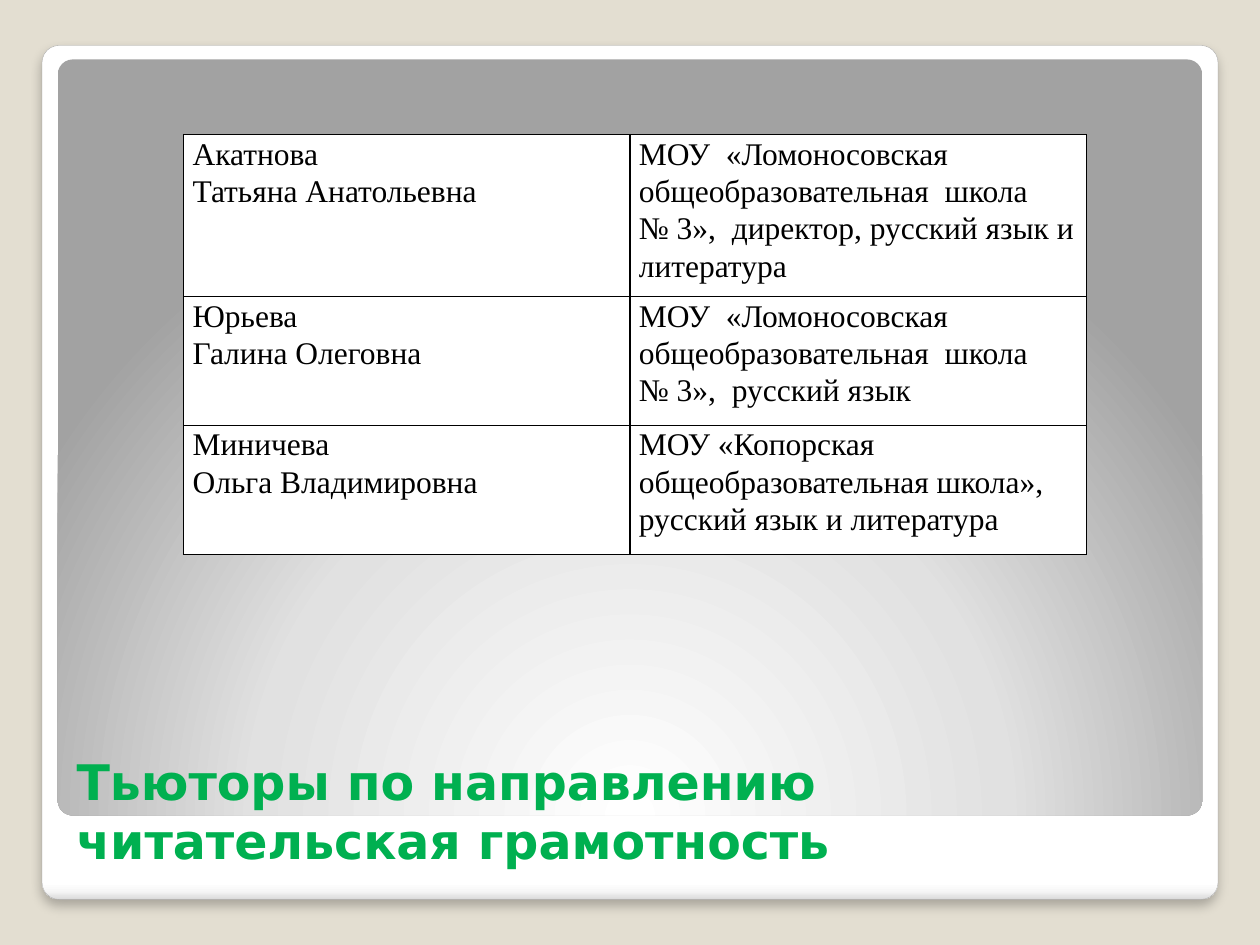
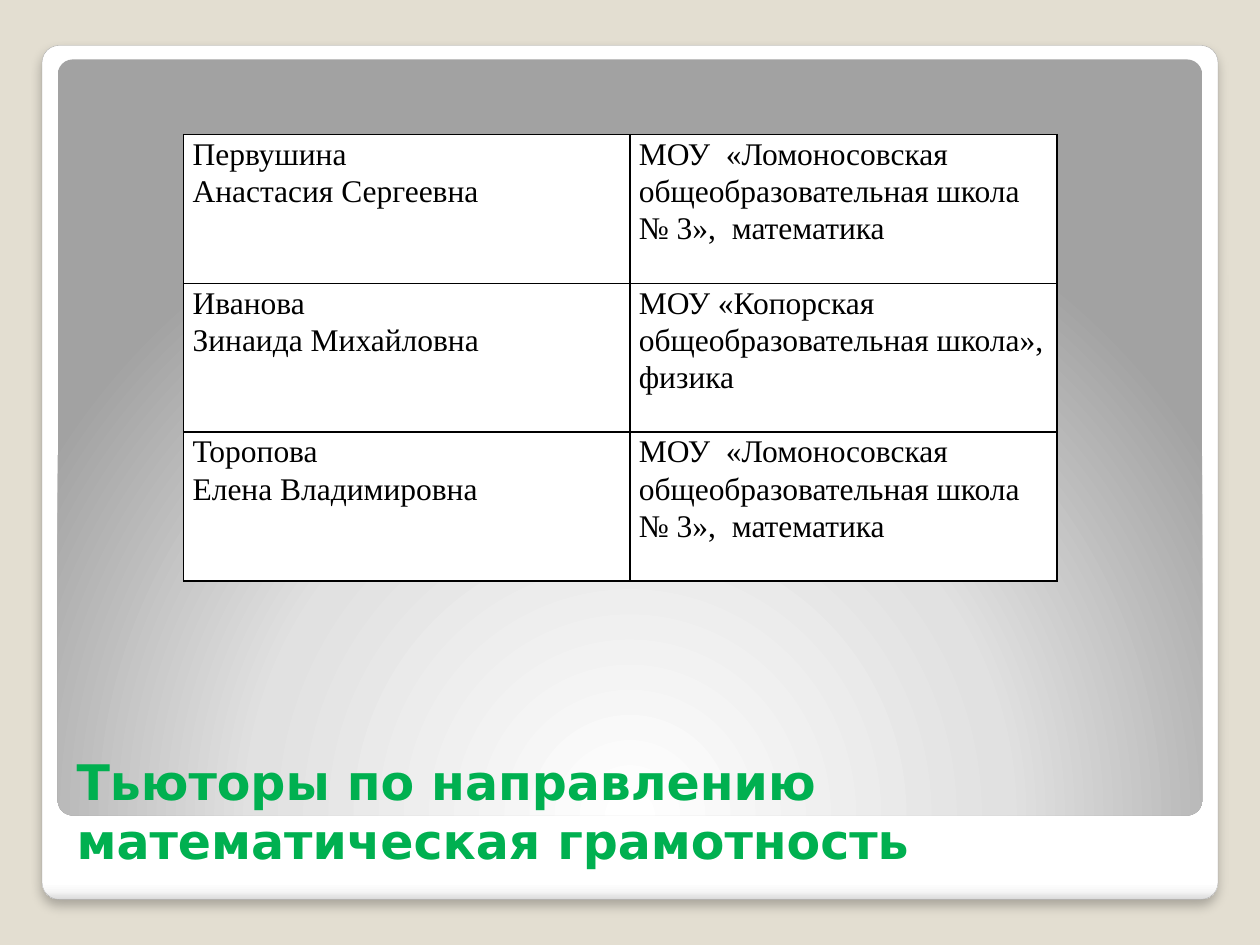
from lxml.etree import SubElement as Sub
from pptx import Presentation
from pptx.dml.color import RGBColor
from pptx.enum.shapes import MSO_SHAPE as Shape
from pptx.enum.text import MSO_ANCHOR as Anchor
from pptx.oxml.ns import qn
from pptx.util import Pt

BACKDROP = "E3DED1"
WHITE = "FFFFFF"
BLACK = "000000"
GREEN = "00B050"
EDGE = "A4A4A4"
CARD_STOPS = [(0, WHITE), (98, WHITE), (99, "F7F7F7"), (100, "DADADA")]
PANEL_STOPS = [(0, WHITE), (55, "E1E1E1"), (100, "A2A2A2")]
TITLE_FONT = "DejaVu Sans"
TABLE_FONT = "Times New Roman"
NAME_WIDTH = 255

READING = [
    (["Акатнова", "Татьяна Анатольевна"],
     ["МОУ  «Ломоносовская общеобразовательная  школа",
      "№ 3»,  директор, русский язык и литература"]),
    (["Юрьева", "Галина Олеговна"],
     ["МОУ  «Ломоносовская общеобразовательная  школа", "№ 3»,  русский язык"]),
    (["Миничева", "Ольга Владимировна"],
     ["МОУ «Копорская общеобразовательная школа», русский язык и литература"]),
]
MATHS = [
    (["Первушина", "Анастасия Сергеевна"],
     ["МОУ  «Ломоносовская общеобразовательная школа № 3»,  математика"]),
    (["Иванова", "Зинаида Михайловна"],
     ["МОУ «Копорская общеобразовательная школа», физика"]),
    (["Торопова", "Елена Владимировна"],
     ["МОУ  «Ломоносовская общеобразовательная школа № 3»,  математика"]),
]


def rgb(color):
    return RGBColor.from_string(color)


def add_run(p, text, font, size, color, bold=False):
    r = p.add_run()
    r.text = text
    r.font.name = font
    r.font.size = Pt(size)
    r.font.bold = bold
    r.font.color.rgb = rgb(color)


def set_gradient(sp, stops):
    sp.fill.gradient()
    grad = sp._element.spPr.find(qn("a:gradFill"))
    for child in list(grad):
        grad.remove(child)
    stop_list = Sub(grad, qn("a:gsLst"))
    for pos, color in stops:
        stop = Sub(stop_list, qn("a:gs"), pos=str(pos * 1000))
        Sub(stop, qn("a:srgbClr"), val=color)
    return grad


def add_round_rect(slide, left, top, width, height):
    sp = slide.shapes.add_shape(Shape.ROUNDED_RECTANGLE, Pt(left), Pt(top),
                                Pt(width), Pt(height))
    sp.adjustments[0] = 0.02
    sp.shadow.inherit = False
    return sp


def add_card(slide):
    sp = add_round_rect(slide, 24, 26, 672, 488)
    grad = set_gradient(sp, CARD_STOPS)
    Sub(grad, qn("a:lin"), ang="5400000", scaled="0")
    sp.line.color.rgb = rgb(EDGE)
    sp.line.width = Pt(0.16)
    effects = sp._element.spPr.find(qn("a:effectLst"))
    shadow = Sub(effects, qn("a:outerShdw"), blurRad=str(Pt(6)), dist=str(Pt(4)),
                 dir="5400000", algn="t", rotWithShape="0")
    color = Sub(shadow, qn("a:srgbClr"), val=BLACK)
    Sub(color, qn("a:alpha"), val="25000")


def add_panel(slide):
    sp = add_round_rect(slide, 33, 34, 654, 432)
    grad = set_gradient(sp, PANEL_STOPS)
    focus = Sub(grad, qn("a:path"), path="circle")
    Sub(focus, qn("a:fillToRect"), l="50000", t="175000", r="50000", b="-75000")
    sp.line.fill.background()


def add_title(slide, text):
    tf = slide.shapes.add_textbox(Pt(36.7), Pt(417.5), Pt(644.5), Pt(83)).text_frame
    tf.word_wrap = True
    tf.vertical_anchor = Anchor.BOTTOM
    add_run(tf.paragraphs[0], text, TITLE_FONT, 28, GREEN, bold=True)


def set_borders(cell):
    tc_pr = cell._tc.get_or_add_tcPr()
    for side in ("lnL", "lnR", "lnT", "lnB"):
        ln = Sub(tc_pr, qn(f"a:{side}"), w=str(Pt(1)))
        Sub(Sub(ln, qn("a:solidFill")), qn("a:srgbClr"), val=BLACK)


def fill_cell(cell, lines):
    set_borders(cell)
    cell.fill.solid()
    cell.fill.fore_color.rgb = rgb(WHITE)
    cell.margin_left = cell.margin_right = Pt(5.1)
    cell.margin_top = cell.margin_bottom = 0
    tf = cell.text_frame
    for i, line in enumerate(lines):
        p = tf.add_paragraph() if i else tf.paragraphs[0]
        p.line_spacing = 1.07
        add_run(p, line, TABLE_FONT, 18, BLACK)


def add_tutors(slide, tutors, school_width, heights):
    widths = [NAME_WIDTH, school_width]
    table = slide.shapes.add_table(len(tutors), len(widths), Pt(105), Pt(77),
                                   Pt(sum(widths)), Pt(sum(heights))).table
    table.first_row = table.horz_banding = False
    for column, width in zip(table.columns, widths):
        column.width = Pt(width)
    for row, height, tutor in zip(table.rows, heights, tutors):
        row.height = Pt(height)
        for cell, lines in zip(row.cells, tutor):
            fill_cell(cell, lines)


def add_tutor_slide(prs, title, tutors, school_width, heights):
    slide = prs.slides.add_slide(prs.slide_layouts[6])
    slide.background.fill.solid()
    slide.background.fill.fore_color.rgb = rgb(BACKDROP)
    add_card(slide)
    add_panel(slide)
    add_title(slide, title)
    add_tutors(slide, tutors, school_width, heights)


def main():
    prs = Presentation()
    prs.slide_width, prs.slide_height = Pt(720), Pt(540)
    add_tutor_slide(prs, "Тьюторы по направлению читательская грамотность",
                    READING, 261, [85, 73.7, 73.7])
    add_tutor_slide(prs, "Тьюторы по направлению математическая грамотность",
                    MATHS, 244, [85] * 3)
    prs.save("out.pptx")


if __name__ == "__main__":
    main()
